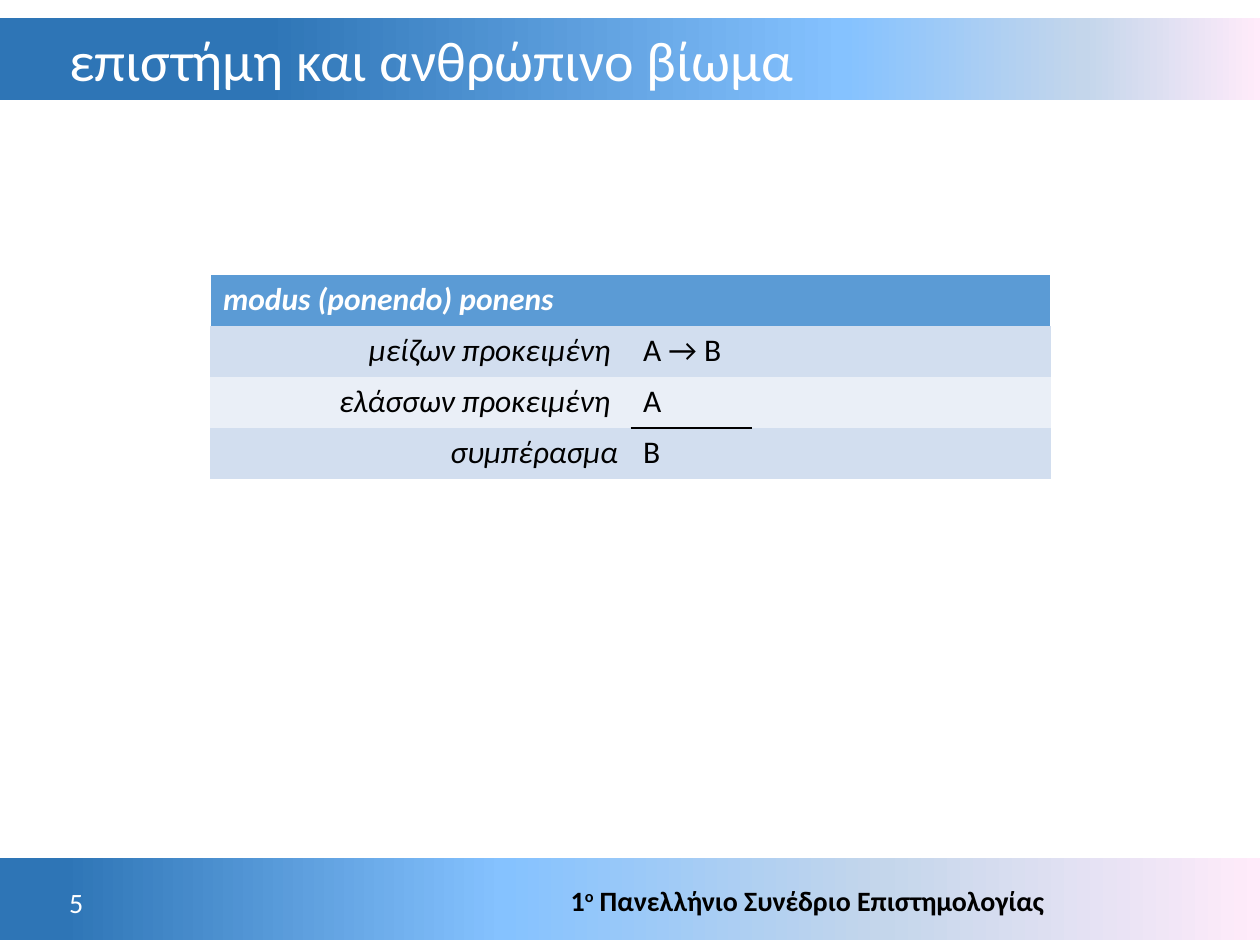
import pptx
import pptx.chart.data
import pptx.dml.color
import pptx.enum.shapes
import pptx.enum.text
import pptx.oxml
import pptx.oxml.ns
import pptx.util
from pptx.util import Inches

ALIGN = pptx.enum.text.PP_ALIGN
ANCHOR = pptx.enum.text.MSO_ANCHOR
NS = pptx.oxml.ns.nsdecls("a")
NO_STYLE = "{2D5ABB26-0587-4C30-8999-92F81FD0307C}"
STOP_COLORS = ("2E75B6", "85C2FF", "C4D6EB", "FFEBFA")


def rgb(value):
    """Return the colour for a hex string."""
    return pptx.dml.color.RGBColor.from_string(value)


def add_run(p, text, size, color, baseline=0, **formats):
    """Append a formatted run to a paragraph."""
    r = p.add_run()
    r.text = text
    r.font.color.rgb = rgb(color)
    formats = {"name": "Calibri", "size": pptx.util.Pt(size), **formats}
    for key, value in formats.items():
        setattr(r.font, key, value)
    if baseline:
        r.font._element.set("baseline", str(baseline * 1000))


def add_text(s, box, runs, align=ALIGN.LEFT, spacing=1.0):
    """Place one vertically centred paragraph in a box."""
    tf = s.shapes.add_textbox(*map(Inches, box)).text_frame
    tf.word_wrap = True
    tf.vertical_anchor = ANCHOR.MIDDLE
    p = tf.paragraphs[0]
    p.alignment = align
    p.line_spacing = spacing
    for run in runs:
        add_run(p, **run)


def add_band(s, box, positions):
    """Draw a horizontal gradient band with stops at the given percentages."""
    sp = s.shapes.add_shape(pptx.enum.shapes.MSO_SHAPE.RECTANGLE, *map(Inches, box))
    sp.shadow.inherit = False
    sp.line.fill.background()
    sp.fill.gradient()
    sp.fill.gradient_angle = 0
    stops = sp._element.spPr.find(".//" + pptx.oxml.ns.qn("a:gsLst"))
    for stop in list(stops):
        stops.remove(stop)
    for position, color in zip(positions, STOP_COLORS):
        stops.append(pptx.oxml.parse_xml(
            f'<a:gs {NS} pos="{position * 1000}"><a:srgbClr val="{color}"/></a:gs>'))


def add_header(s, box):
    """Draw the title band and the title."""
    left, top, width, height = box
    add_band(s, box, (21, 67, 86, 100))
    add_text(s, (left + 0.45, top + 0.03, 8.87, 0.67),
             [dict(text="επιστήμη και ανθρώπινο βίωμα", size=32, color="FFFFFF")],
             spacing=0.9)


def add_footer(s, box):
    """Draw the footer band, the conference name and the slide number."""
    left, top, width, height = box
    add_band(s, box, (5, 40, 70, 100))
    style = dict(size=16, color="000000", bold=True)
    add_text(s, (left + 1.13, top + 0.12, 7.26, 0.43),
             [dict(text="1", **style), dict(text="ο", baseline=30, **style),
              dict(text=" Πανελλήνιο Συνέδριο Επιστημολογίας", **style)], ALIGN.RIGHT)
    add_text(s, (left + 0.45, top + 0.14, 0.47, 0.43),
             [dict(text="5", size=16, color="FFFFFF")])


def fill_cell(cell, text, fill, color="000000", align=ALIGN.LEFT, **formats):
    """Write and colour one table cell."""
    cell.fill.solid()
    cell.fill.fore_color.rgb = rgb(fill)
    p = cell.text_frame.paragraphs[0]
    p.alignment = align
    add_run(p, text, 18, color, **formats)


def add_border(cell, sides, color):
    """Give a cell one-point borders on the named sides."""
    tcPr = cell._tc.get_or_add_tcPr()
    for i, side in enumerate(sides):
        tcPr.insert(i, pptx.oxml.parse_xml(
            f'<a:ln{side} {NS} w="12700"><a:solidFill><a:srgbClr val="{color}"/>'
            f'</a:solidFill></a:ln{side}>'))


def add_syllogism(s, box):
    """Draw the table of premises and the inference line."""
    left, top, width, height = box
    rows = (("μείζων προκειμένη", "Α → Β", 0.16),
            ("ελάσσων προκειμένη", "Α", 0.16),
            ("συμπέρασμα", "Β", 0.1))
    table = s.shapes.add_table(len(rows) + 1, 2, *map(Inches, box)).table
    table._tbl.tblPr.find(pptx.oxml.ns.qn("a:tableStyleId")).text = NO_STYLE
    table.first_row = table.horz_banding = False

    head = table.cell(0, 0)
    head.merge(table.cell(0, 1))
    fill_cell(head, "modus (ponendo) ponens", "5B9BD5", "FFFFFF", bold=True, italic=True)
    add_border(head, "LRT", "FFFFFF")
    for i, (label, formula, margin) in enumerate(rows, 1):
        fill = "D2DEEF" if i % 2 else "EAEFF7"
        fill_cell(table.cell(i, 0), label, fill, align=ALIGN.RIGHT, italic=True)
        table.cell(i, 0).margin_right = Inches(margin)
        fill_cell(table.cell(i, 1), formula, fill)

    x, y = left + width / 2, top + height * 0.75
    line = s.shapes.add_connector(pptx.enum.shapes.MSO_CONNECTOR.STRAIGHT,
                                  *map(Inches, (x, y, x + 0.96, y)))
    line.line.color.rgb = rgb("000000")
    line.line.width = pptx.util.Pt(1.25)
    line._element.spPr.append(pptx.oxml.parse_xml(f"<a:effectLst {NS}/>"))


def main():
    """Build the presentation."""
    prs = pptx.Presentation()
    prs.slide_width, prs.slide_height = Inches(10), Inches(7.5)
    s = prs.slides.add_slide(prs.slide_layouts[6])
    add_footer(s, (0, 6.81, 10, 0.65))
    add_header(s, (0, 0.14, 10, 0.65))
    add_syllogism(s, (1.67, 2.18, 6.67, 1.62))
    prs.save("out.pptx")


if __name__ == "__main__":
    main()
